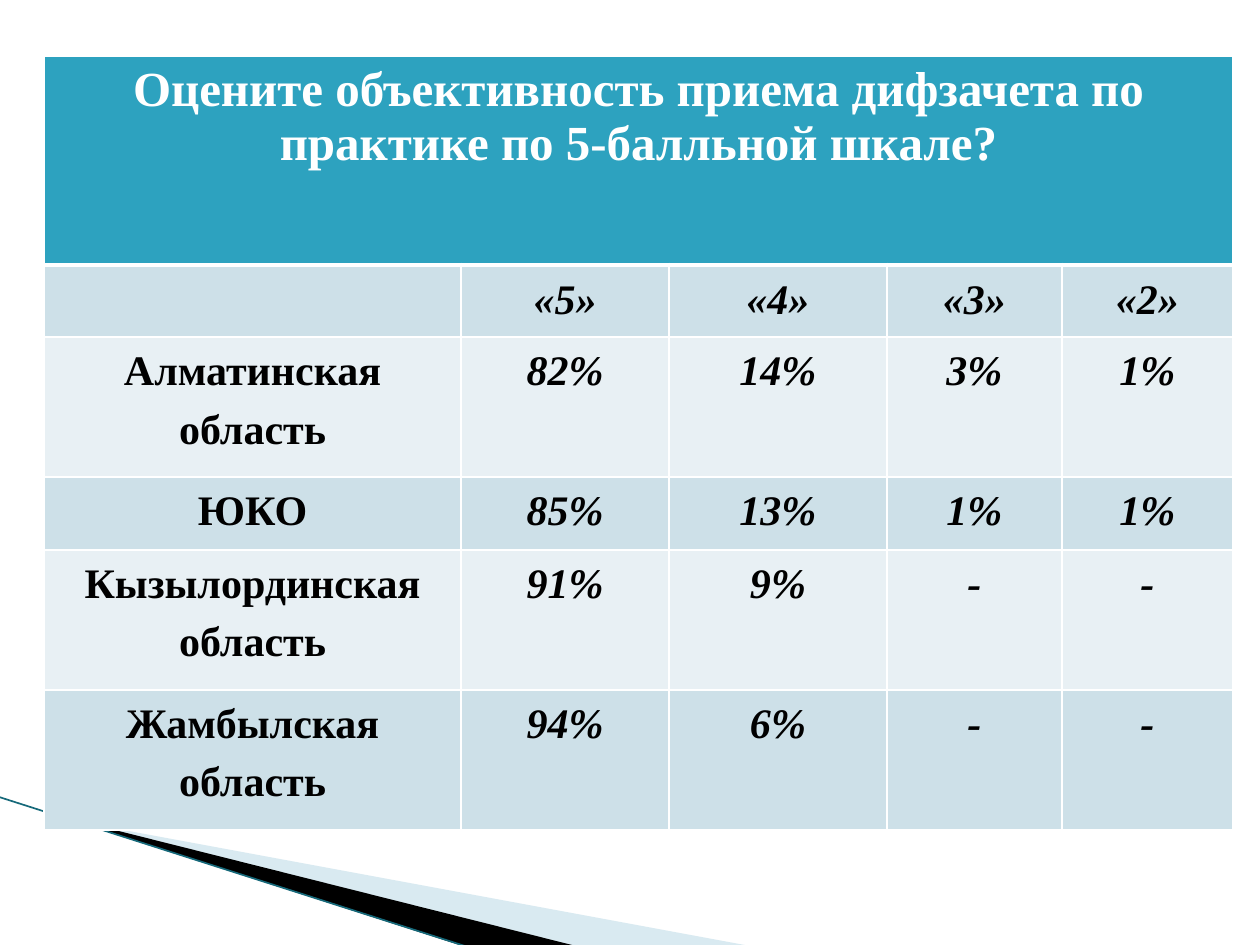
from lxml import etree
from pptx import Presentation
from pptx import util as u
from pptx.dml.color import RGBColor
from pptx.enum import shapes, text
from pptx.oxml.ns import qn

TITLE = "Оцените объективность приема дифзачета по практике по 5-балльной шкале?"
ROWS = [
    ("", "«5»", "«4»", "«3»", "«2»"),
    ("Алматинская\nобласть", "82%", "14%", "3%", "1%"),
    ("ЮКО", "85%", "13%", "1%", "1%"),
    ("Кызылординская область", "91%", "9%", "-", "-"),
    ("Жамбылская\nобласть", "94%", "6%", "-", "-"),
]
COLUMN_WIDTHS = (417, 208, 218, 175, 171)
ROW_HEIGHTS = (209, 72, 140, 73, 140, 140)
TABLE_LEFT, TABLE_TOP = 44, 56
FONT = "Times New Roman"
COLORS = {
    "header": "2DA2BF", "band": "CDE0E8", "light band": "E8F0F4",
    "white": "FFFFFF", "black": "000000", "wedge": "A0CBDC", "edge": "16697A",
}
# Corner wedges: points, colour, opacity in percent
WEDGES = [
    ([(69, 820), (750, 946), (575, 946), (69, 819)], "wedge", 40),
    ([(67, 818), (576, 946), (469, 948), (68, 819)], "black", 100),
]
EDGE = (-1, 797, 468, 947)
SCALE = 914400 / 126


def px(value):
    return u.Emu(round(value * SCALE))


def color(name):
    return RGBColor.from_string(COLORS[name])


def add_wedge(slide, points, fill, opacity):
    builder = slide.shapes.build_freeform(*points[0], scale=SCALE)
    builder.add_line_segments(points[1:], close=True)
    shape = builder.convert_to_shape()
    shape.shadow.inherit = False
    shape.line.fill.background()
    shape.fill.solid()
    shape.fill.fore_color.rgb = color(fill)
    if opacity < 100:
        tint = shape.fill._xPr.find(".//" + qn("a:srgbClr"))
        etree.SubElement(tint, qn("a:alpha"), val=str(opacity * 1000))


def set_borders(cell, bottom=1):
    properties = cell._tc.get_or_add_tcPr()
    widths = {"lnL": 1, "lnR": 1, "lnT": 1, "lnB": bottom}
    for position, (side, width) in enumerate(widths.items()):
        line = etree.Element(qn("a:" + side), w=str(u.Pt(width)))
        fill = etree.SubElement(line, qn("a:solidFill"))
        etree.SubElement(fill, qn("a:srgbClr"), val=COLORS["white"])
        properties.insert(position, line)


def fill_cell(cell, words, fill, size, ink, italic=False, spacing=None):
    cell.fill.solid()
    cell.fill.fore_color.rgb = color(fill)
    cell.text = words
    for paragraph in cell.text_frame.paragraphs:
        paragraph.alignment = text.PP_ALIGN.CENTER
        paragraph.line_spacing = spacing
        font = paragraph.font
        font.name, font.size = FONT, u.Pt(size)
        font.bold, font.italic = True, italic
        font.color.rgb = color(ink)


presentation = Presentation()
presentation.slide_width, presentation.slide_height = px(1260), px(945)
slide = presentation.slides.add_slide(presentation.slide_layouts[6])

# Corner decoration
for wedge in WEDGES:
    add_wedge(slide, *wedge)
edge = slide.shapes.add_connector(shapes.MSO_CONNECTOR.STRAIGHT, *map(px, EDGE))
edge.line.color.rgb = color("edge")
edge.line.width = u.Pt(0.95)
etree.SubElement(edge._element.spPr, qn("a:effectLst"))

# Table grid
table = slide.shapes.add_table(
    len(ROW_HEIGHTS), len(COLUMN_WIDTHS), px(TABLE_LEFT), px(TABLE_TOP),
    px(sum(COLUMN_WIDTHS)), px(sum(ROW_HEIGHTS))).table
for column, width in zip(table.columns, COLUMN_WIDTHS):
    column.width = px(width)
for row, height in zip(table.rows, ROW_HEIGHTS):
    row.height = px(height)

# Title row
table.cell(0, 0).merge(table.cell(0, len(COLUMN_WIDTHS) - 1))
fill_cell(table.cell(0, 0), TITLE, "header", 28, "white")
for column in range(len(COLUMN_WIDTHS)):
    set_borders(table.cell(0, column), bottom=3)

# Answers by region
for r, values in enumerate(ROWS, start=1):
    band = "band" if r % 2 else "light band"
    for c, value in enumerate(values):
        cell = table.cell(r, c)
        fill_cell(cell, value, band, 24, "black", italic=c > 0, spacing=1.25)
        cell.margin_left = cell.margin_right = px(9)
        cell.margin_top = cell.margin_bottom = 0
        set_borders(cell)

presentation.save("out.pptx")
